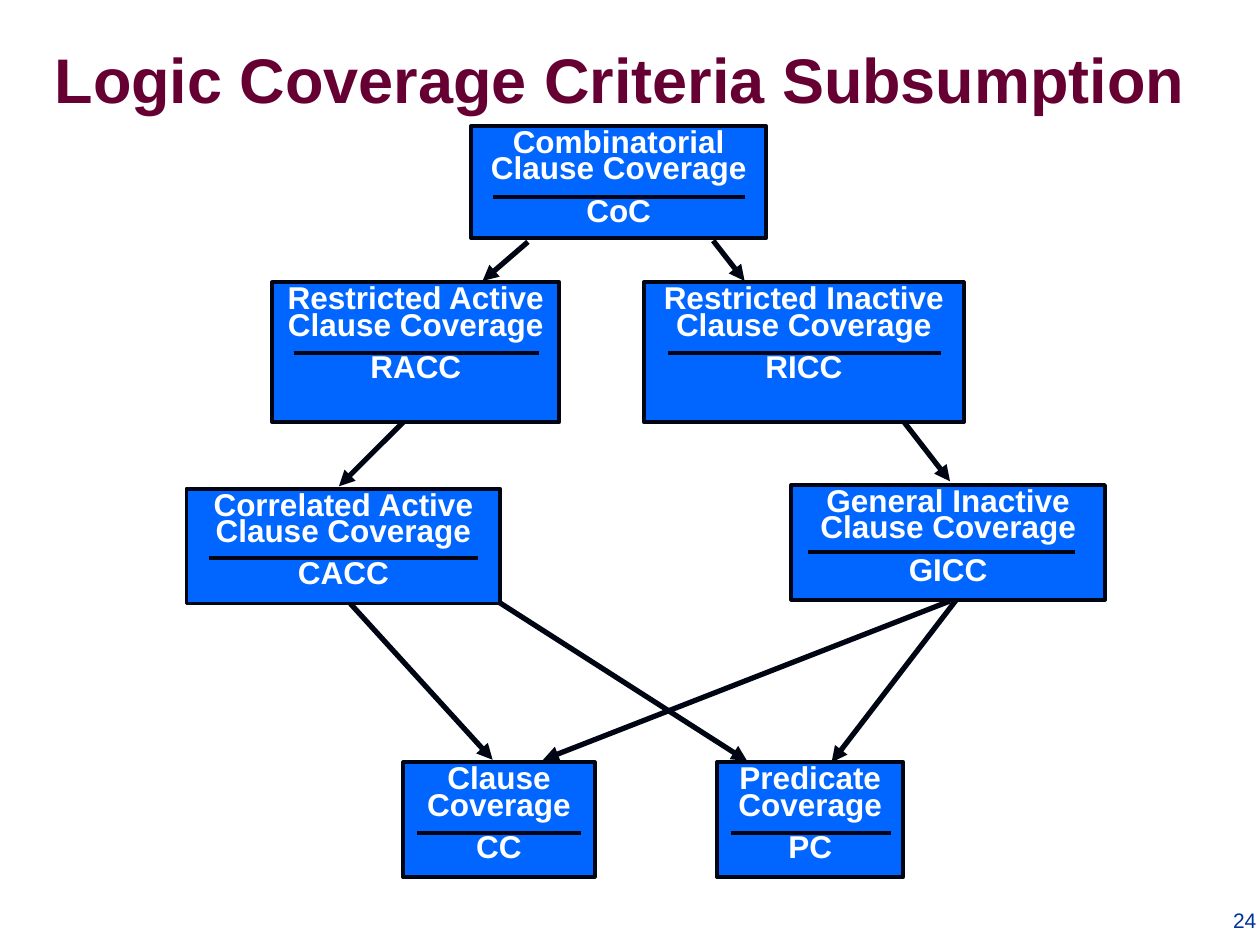
from lxml import etree
from pptx import Presentation
from pptx.dml.color import RGBColor
from pptx.enum.shapes import MSO_CONNECTOR, MSO_SHAPE
from pptx.enum.text import MSO_ANCHOR, PP_ALIGN
from pptx.oxml.ns import qn
from pptx.util import Inches, Pt

STRAIGHT = MSO_CONNECTOR.STRAIGHT
RECTANGLE = MSO_SHAPE.RECTANGLE
TOP, MIDDLE, BOTTOM = MSO_ANCHOR.TOP, MSO_ANCHOR.MIDDLE, MSO_ANCHOR.BOTTOM
CENTER, RIGHT = PP_ALIGN.CENTER, PP_ALIGN.RIGHT

FONT = "Arial"
COLORS = {
    "title": "660033",
    "box": "0066FF",
    "line": "000514",
    "label": "FFFFFF",
    "number": "003399",
}

# Criterion, abbreviation, box (left, top, width, height), rule (left, right, y)
CRITERIA = [
    ("Combinatorial Clause Coverage", "CoC", (3.74, 1, 2.34, 0.89), (3.91, 5.91, 1.56)),
    ("Restricted Active Clause Coverage", "RACC", (2.16, 2.24, 2.28, 1.11), (2.33, 4.28, 2.8)),
    ("Restricted Inactive Clause Coverage", "RICC", (5.11, 2.24, 2.54, 1.11), (5.3, 7.47, 2.8)),
    ("Correlated Active Clause Coverage", "CACC", (1.48, 3.88, 2.49, 0.91), (1.66, 3.79, 4.43)),
    ("General Inactive Clause Coverage", "GICC", (6.28, 3.85, 2.49, 0.91), (6.41, 8.53, 4.38)),
    ("Clause Coverage", "CC", (3.2, 6.05, 1.52, 0.91), (3.31, 4.61, 6.61)),
    ("Predicate Coverage", "PC", (5.69, 6.05, 1.48, 0.91), (5.8, 7.07, 6.61)),
]

# Start and end of each subsumption arrow
ARROWS = [
    ((4.19, 1.92), (3.83, 2.23)),  # CoC to RACC
    ((5.66, 1.91), (5.91, 2.23)),  # CoC to RICC
    ((3.2, 3.35), (2.69, 3.86)),   # RACC to CACC
    ((7.02, 3.15), (7.54, 3.82)),  # RICC to GICC
    ((2.78, 4.79), (3.91, 6.03)),  # CACC to CC
    ((3.35, 4.39), (5.93, 6.04)),  # CACC to PC
    ((7.54, 4.77), (4.31, 6.03)),  # GICC to CC
    ((7.79, 4.5), (6.6, 6.05)),    # GICC to PC
]


def color(name):
    return RGBColor.from_string(COLORS[name])


def format_paragraph(paragraph, size, color_name, alignment, bold=False):
    paragraph.alignment = alignment
    paragraph.font.name = FONT
    paragraph.font.size = Pt(size)
    paragraph.font.bold = bold
    paragraph.font.color.rgb = color(color_name)


def add_title(slide, text):
    title = slide.shapes.title
    title.left, title.top = Inches(0.28), Inches(0.11)
    title.width, title.height = Inches(9.42), Inches(1.03)
    title.text_frame.text = text
    title.text_frame.vertical_anchor = MIDDLE
    format_paragraph(title.text_frame.paragraphs[0], 36, "title", CENTER, bold=True)


def add_line(slide, start, end, width, arrow=False):
    points = [Inches(value) for value in (*start, *end)]
    connector = slide.shapes.add_connector(STRAIGHT, *points)
    connector.line.color.rgb = color("line")
    connector.line.width = Pt(width)
    if arrow:
        tail = etree.SubElement(connector.line._get_or_add_ln(), qn("a:tailEnd"))
        tail.set("type", "triangle")
    etree.SubElement(connector._element.spPr, qn("a:effectLst"))


def add_criterion(slide, name, abbreviation, box, rule):
    shape = slide.shapes.add_shape(RECTANGLE, *[Inches(value) for value in box])
    shape.shadow.inherit = False
    shape.fill.solid()
    shape.fill.fore_color.rgb = color("box")
    shape.line.color.rgb = color("line")
    shape.line.width = Pt(2.25)

    frame = shape.text_frame
    frame.word_wrap = True
    frame.vertical_anchor = TOP
    frame.text = f"{name}\n{abbreviation}"
    for paragraph in frame.paragraphs:
        format_paragraph(paragraph, 18, "label", CENTER, bold=True)
        paragraph.line_spacing = 0.7
    frame.paragraphs[1].space_before = Pt(9)

    left, right, y = rule
    add_line(slide, (left, y), (right, y), 2.25)


def add_slide_number(slide, text):
    box = slide.shapes.add_textbox(Inches(7.9), Inches(7.1), Inches(2.17), Inches(0.35))
    frame = box.text_frame
    frame.word_wrap = True
    frame.vertical_anchor = BOTTOM
    frame.text = text
    format_paragraph(frame.paragraphs[0], 12, "number", RIGHT)


def main():
    presentation = Presentation()
    presentation.slide_width, presentation.slide_height = Inches(10), Inches(7.5)
    slide = presentation.slides.add_slide(presentation.slide_layouts[5])

    add_title(slide, "Logic Coverage Criteria Subsumption ")
    add_slide_number(slide, "24")

    # Arrows lie behind the boxes they join
    for start, end in ARROWS:
        add_line(slide, start, end, 3, arrow=True)
    for criterion in CRITERIA:
        add_criterion(slide, *criterion)

    presentation.save("out.pptx")


if __name__ == "__main__":
    main()
